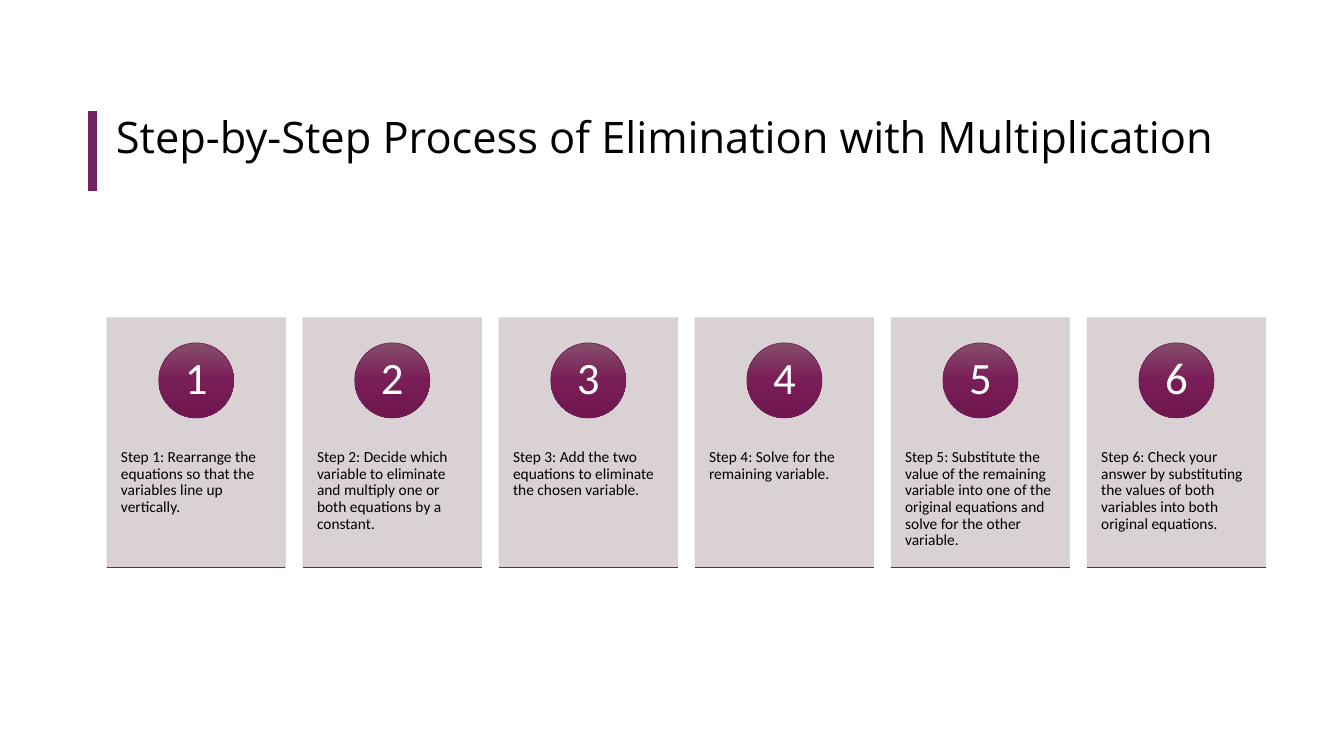
from copy import deepcopy

from lxml.etree import SubElement
from pptx import Presentation
from pptx.dml.color import RGBColor
from pptx.enum.shapes import MSO_CONNECTOR, MSO_SHAPE
from pptx.enum.text import MSO_ANCHOR, PP_ALIGN
from pptx.oxml.ns import qn
from pptx.util import Pt

COLORS = {
    "accent": "722262",
    "card": "D6CDD1",
    "badge_top": "864F6D",
    "badge_middle": "791D57",
    "badge_bottom": "6F164E",
    "outline": "752156",
    "text": "000000",
    "number": "FFFFFF",
}

STEPS = [
    "Rearrange the equations so that the variables line up vertically.",
    "Decide which variable to eliminate and multiply one or both equations by a constant.",
    "Add the two equations to eliminate the chosen variable.",
    "Solve for the remaining variable.",
    "Substitute the value of the remaining variable into one of the original equations "
    "and solve for the other variable.",
    "Check your answer by substituting the values of both variables into both original equations.",
]


def rgb(name):
    return RGBColor.from_string(COLORS[name])


def write(frame, text, font, size, color, align, anchor, insets):
    frame.word_wrap = True
    frame.vertical_anchor = anchor
    side, edge = insets
    frame.margin_left = frame.margin_right = Pt(side)
    frame.margin_top = frame.margin_bottom = Pt(edge)
    paragraph = frame.paragraphs[0]
    paragraph.alignment = align
    paragraph.line_spacing = 0.9
    run = paragraph.add_run()
    run.text = text
    run.font.name = font
    run.font.size = Pt(size)
    run.font.color.rgb = rgb(color)


def add_rule(slide, start, end, color, width):
    rule = slide.shapes.add_connector(
        MSO_CONNECTOR.STRAIGHT, *(Pt(v) for v in (*start, *end)))
    rule.line.color.rgb = rgb(color)
    rule.line.width = Pt(width)
    SubElement(rule._element.spPr, qn("a:effectLst"))


def add_outlined(slide, kind, left, top, width, height, outline):
    shape = slide.shapes.add_shape(kind, Pt(left), Pt(top), Pt(width), Pt(height))
    shape.shadow.inherit = False
    shape.line.color.rgb = rgb(outline)
    shape.line.width = Pt(0.5)
    return shape


def fill_badge(badge):
    badge.fill.gradient()
    badge.fill.gradient_angle = 270
    first = badge._element.spPr.find(".//" + qn("a:gs"))
    first.addnext(deepcopy(first))
    names = ("badge_top", "badge_middle", "badge_bottom")
    for index, (stop, name) in enumerate(zip(badge.fill.gradient_stops, names)):
        stop.position = index / 2
        stop.color.rgb = rgb(name)


def add_header(slide, left, top, width, height):
    add_rule(slide, (left, top), (left, top + height), "accent", 6)
    title = slide.shapes.title
    title.left, title.top = Pt(left + 9.4), Pt(top)
    title.width, title.height = Pt(width - 9.4), Pt(height)
    write(title.text_frame, "Step-by-Step Process of Elimination with Multiplication",
          "Open Sans", 31, "text", PP_ALIGN.LEFT, MSO_ANCHOR.TOP, (7.2, 3.6))


def add_step(slide, number, instruction, left, top, width, height):
    # Card
    card = add_outlined(slide, MSO_SHAPE.RECTANGLE, left, top, width, height, "card")
    card.fill.solid()
    card.fill.fore_color.rgb = rgb("card")
    for color in card._element.spPr.iter(qn("a:srgbClr")):
        SubElement(color, qn("a:alpha"), val="90000")

    # Instruction below the badge
    offset = 90
    instruction_box = slide.shapes.add_textbox(
        Pt(left), Pt(top + offset), Pt(width), Pt(height - offset))
    write(instruction_box.text_frame, f"Step {number}: {instruction}", "Calibri", 11, "text",
          PP_ALIGN.LEFT, MSO_ANCHOR.TOP, (10, 4))

    # Numbered badge
    diameter = 53.6
    badge = add_outlined(slide, MSO_SHAPE.OVAL, left + (width - diameter) / 2, top + 17.9,
                         diameter, diameter, "outline")
    fill_badge(badge)
    write(badge.text_frame, str(number), "Calibri", 32, "number",
          PP_ALIGN.CENTER, MSO_ANCHOR.MIDDLE, (0, 0))

    # Baseline
    add_rule(slide, (left, top + height), (left + width, top + height), "outline", 0.5)


def add_steps(slide, left, top, width, height):
    gap = 12.5
    card_width = (width - gap * (len(STEPS) - 1)) / len(STEPS)
    for index, instruction in enumerate(STEPS):
        add_step(slide, index + 1, instruction, left + index * (card_width + gap), top,
                 card_width, height)


def main():
    presentation = Presentation()
    presentation.slide_width, presentation.slide_height = Pt(960), Pt(540)
    slide = presentation.slides.add_slide(presentation.slide_layouts[5])
    add_header(slide, 66.2, 79.2, 837.4, 57.2)
    add_steps(slide, 76.4, 227, 827.7, 178.4)
    presentation.save("out.pptx")


if __name__ == "__main__":
    main()
